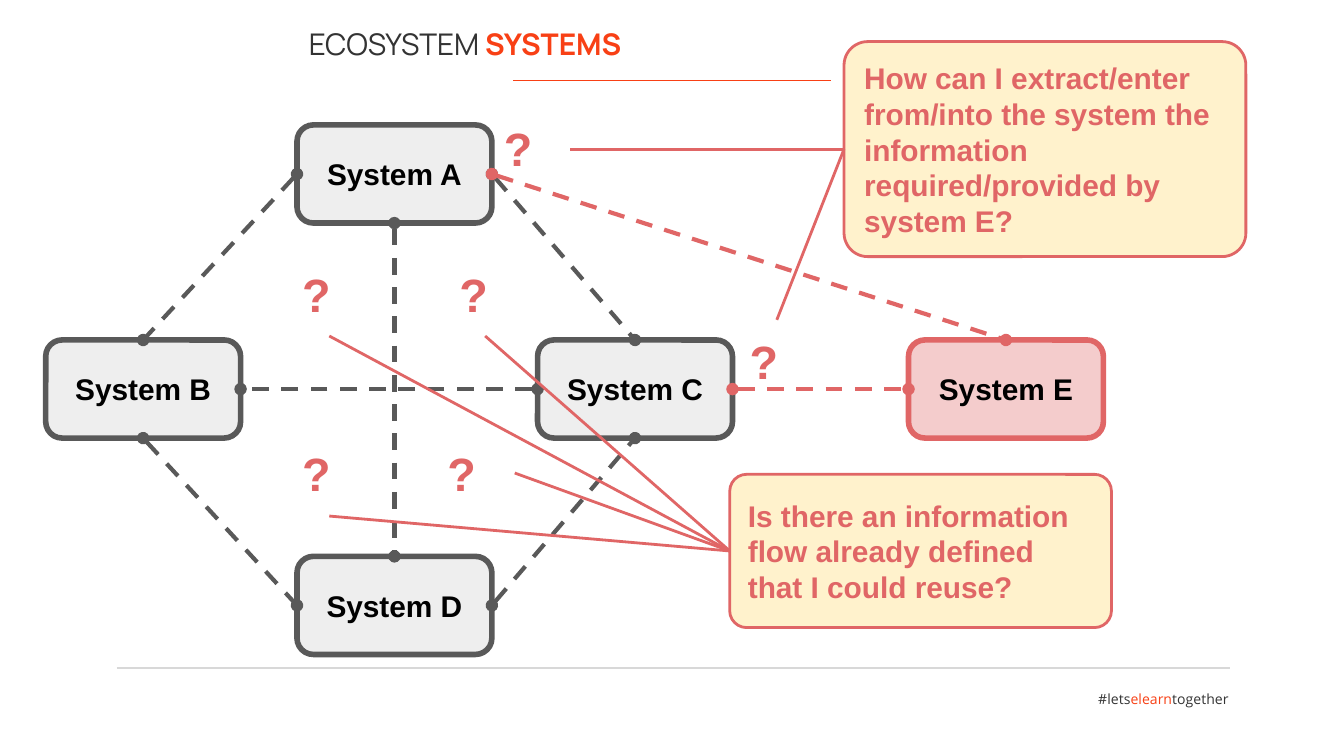
from dataclasses import dataclass

from lxml import etree
from pptx import Presentation
from pptx import util as u
from pptx.dml.color import RGBColor
from pptx.enum import dml, shapes, text
from pptx.oxml import ns

GREY, RED, ORANGE, DARK = "595959", "E06666", "F84015", "333333"
SIDES = {"left": (0, 0.5), "right": (1, 0.5), "top": (0.5, 0), "bottom": (0.5, 1)}


@dataclass
class Box:
    label: str
    left: float
    top: float
    width: float = 1.45
    height: float = 0.73
    fill: str = "EEEEEE"
    line: str = GREY
    weight: float = 3
    corner: float = 0.167
    ink: str = "000000"
    align: text.PP_ALIGN = text.PP_ALIGN.CENTER

    def site(self, side: str) -> tuple[float, float]:
        """Return the middle of one side."""
        across, down = SIDES[side]
        return self.left + across * self.width, self.top + down * self.height


@dataclass
class Link:
    start: tuple[str, str]
    end: tuple[str, str]
    color: str = GREY


@dataclass
class Callout:
    box: Box
    targets: list[tuple[float, float]]


def callout_box(label: str, left: float, top: float, width: float, height: float) -> Box:
    """Describe a yellow question box."""
    return Box(label, left, top, width, height, "FFF2CC", RED, 1.5, 0.11, RED,
               text.PP_ALIGN.LEFT)


SYSTEMS = {
    "A": Box("System A", 2.21, 0.93),
    "B": Box("System B", 0.34, 2.53),
    "C": Box("System C", 4, 2.53),
    "D": Box("System D", 2.21, 4.14),
    "E": Box("System E", 6.76, 2.53, fill="F4CCCC", line=RED),
}
LINKS = [
    Link(("A", "left"), ("B", "top")),
    Link(("A", "right"), ("C", "top")),
    Link(("D", "right"), ("C", "bottom")),
    Link(("A", "bottom"), ("D", "top")),
    Link(("B", "bottom"), ("D", "left")),
    Link(("C", "left"), ("B", "right")),
    Link(("A", "right"), ("E", "top"), RED),
    Link(("C", "right"), ("E", "left"), RED),
]
MARKS = [(3.65, 0.79), (5.48, 2.38), (3.32, 1.88), (2.15, 1.88), (3.23, 3.21), (2.15, 3.21)]
CALLOUTS = [
    Callout(callout_box("How can I extract/enter from/into the system the information "
                        "required/provided by system E?", 6.28, 0.31, 2.99, 1.6),
            [(4.24, 1.11), (5.78, 2.38)]),
    Callout(callout_box("Is there an information flow already defined that I could reuse?",
                        5.43, 3.53, 2.84, 1.14),
            [(3.61, 2.5), (2.45, 2.5), (3.83, 3.52), (2.45, 3.84)]),
]


def rgb(color: str) -> RGBColor:
    """Turn a hex string into a colour."""
    return RGBColor.from_string(color)


def add_span(para, words: str, *, size: float, color: str, font: str = "Arial",
             bold: bool = False) -> None:
    """Add formatted words to a paragraph."""
    span = para.add_run()
    span.text = words
    span.font.size = u.Pt(size)
    span.font.name = font
    span.font.bold = bold
    span.font.color.rgb = rgb(color)


def set_frame(frame, inset: float) -> None:
    """Wrap the text and set equal top and bottom insets."""
    frame.word_wrap = True
    frame.margin_left = frame.margin_right = u.Inches(0.1)
    frame.margin_top = frame.margin_bottom = u.Inches(inset)


def add_label(page, left: float, top: float, width: float, height: float,
              inset: float = 0.05, align=text.PP_ALIGN.LEFT):
    """Add a text box and return its paragraph."""
    label = page.shapes.add_textbox(*map(u.Inches, (left, top, width, height)))
    set_frame(label.text_frame, inset)
    para = label.text_frame.paragraphs[0]
    para.alignment = align
    return para


def add_line(page, start: tuple[float, float], end: tuple[float, float], color: str,
             weight: float, dashed: bool = False) -> None:
    """Draw a plain line, or a dashed one with round ends."""
    line = page.shapes.add_connector(shapes.MSO_CONNECTOR.STRAIGHT,
                                     *map(u.Inches, (*start, *end)))
    line.line.color.rgb = rgb(color)
    line.line.width = u.Pt(weight)
    if dashed:
        line.line.dash_style = dml.MSO_LINE.DASH
        for tag in ("a:headEnd", "a:tailEnd"):
            etree.SubElement(line.line._get_or_add_ln(), ns.qn(tag), type="oval")
    etree.SubElement(line._element.spPr, ns.qn("a:effectLst"))


def add_box(page, box: Box) -> None:
    """Draw a rounded box with its bold label."""
    shape = page.shapes.add_shape(
        shapes.MSO_SHAPE.ROUNDED_RECTANGLE,
        *map(u.Inches, (box.left, box.top, box.width, box.height)))
    shape.adjustments[0] = box.corner
    shape.shadow.inherit = False
    shape.fill.solid()
    shape.fill.fore_color.rgb = rgb(box.fill)
    shape.line.color.rgb = rgb(box.line)
    shape.line.width = u.Pt(box.weight)
    frame = shape.text_frame
    set_frame(frame, 0.1)
    frame.vertical_anchor = text.MSO_ANCHOR.MIDDLE
    para = frame.paragraphs[0]
    para.alignment = box.align
    add_span(para, box.label, size=16, color=box.ink, bold=True)


def add_title_and_footer(page) -> None:
    """Draw the heading, the hashtag and their rules."""
    add_line(page, (0.87, 4.97), (9.15, 4.97), "D8D8D8", 1)
    footer = add_label(page, 7.62, 5.09, 1.62, 0.23, align=text.PP_ALIGN.RIGHT)
    for words, color in (("#lets", DARK), ("elearn", ORANGE), ("together", DARK)):
        add_span(footer, words, size=7.5, color=color, font="Open Sans")
    title = add_label(page, 2.2, 0.14, 5.9, 0.41)
    add_span(title, "ECOSYSTEM ", size=16, color=DARK, font="Manrope")
    add_span(title, "SYSTEMS", size=16, color=ORANGE, font="Manrope", bold=True)
    add_line(page, (3.82, 0.6), (6.18, 0.6), ORANGE, 0.75)


def main() -> None:
    """Build and save the slide."""
    deck = Presentation()
    deck.slide_width, deck.slide_height = u.Inches(10), u.Inches(10 * 9 / 16)
    page = deck.slides.add_slide(deck.slide_layouts[6])
    add_title_and_footer(page)
    for box in SYSTEMS.values():
        add_box(page, box)
    for link in LINKS:
        (first, exit_side), (second, entry_side) = link.start, link.end
        add_line(page, SYSTEMS[first].site(exit_side), SYSTEMS[second].site(entry_side),
                 link.color, 2.25, dashed=True)
    for left, top in MARKS:
        mark = add_label(page, left, top, 0.59, 0.63, inset=0.1)
        add_span(mark, "?", size=25, color=RED, bold=True)
    for callout in CALLOUTS:
        add_box(page, callout.box)
        for target in callout.targets:
            add_line(page, callout.box.site("left"), target, RED, 1.5)
    deck.save("out.pptx")


if __name__ == "__main__":
    main()
